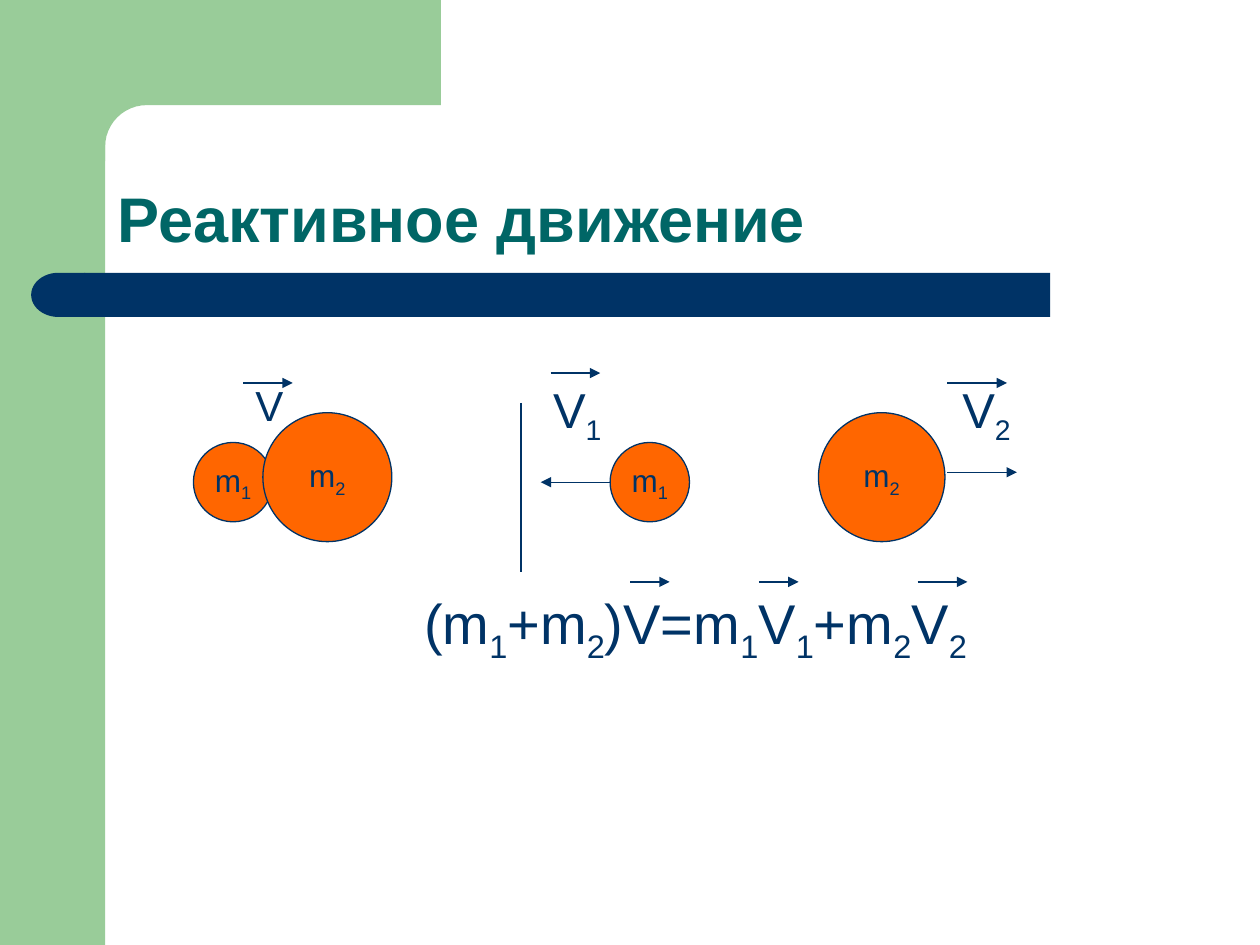
import math

import pptx
import pptx.dml.color
import pptx.enum.shapes
import pptx.enum.text
import pptx.oxml
import pptx.oxml.ns
import pptx.util

Cm = pptx.util.Cm
SHAPES = pptx.enum.shapes.MSO_SHAPE
ANCHOR = pptx.enum.text.MSO_ANCHOR
ALIGN = pptx.enum.text.PP_ALIGN

FONT = "Arial"
COLORS = {"green": "99CC99", "navy": "003366", "teal": "006666", "orange": "FF6600"}


def color(name):
    return pptx.dml.color.RGBColor.from_string(COLORS[name])


def add_run(paragraph, text, size, color_name="navy", bold=False):
    run = paragraph.add_run()
    run.text = text
    run.font.name = FONT
    run.font.size = pptx.util.Pt(size)
    run.font.bold = bold
    run.font.color.rgb = color(color_name)
    return run


def add_formula(paragraph, formula, size):
    """Write a formula in which the character after each "_" is a subscript."""
    first, *others = formula.split("_")
    add_run(paragraph, first, size)
    for piece in others:
        subscript = add_run(paragraph, piece[0], size)
        subscript.font._element.set("baseline", "-25000")
        if piece[1:]:
            add_run(paragraph, piece[1:], size)


def paint(shape, fill, line=None):
    shape.shadow.inherit = False
    shape.fill.solid()
    shape.fill.fore_color.rgb = color(fill)
    if line:
        shape.line.color.rgb = color(line)
        shape.line.width = pptx.util.Pt(0.75)
    else:
        shape.line.fill.background()


def add_block(slide, kind, left, top, width, height, fill):
    shape = slide.shapes.add_shape(kind, Cm(left), Cm(top), Cm(width), Cm(height))
    paint(shape, fill)
    return shape


def add_corner(slide):
    """Draw the top band, whose inner corner is rounded."""
    left, right, inner, top, bottom, radius = 1.27, 8.89, 2.12, 2.12, 3.25, 0.84
    angles = [math.radians(90 * step / 12) for step in range(13)]
    arc = [
        (inner + radius * (1 - math.sin(angle)), top + radius * (1 - math.cos(angle)))
        for angle in angles
    ]
    points = [(right, top), *arc, (inner, bottom), (left, bottom), (left, 0)]
    builder = slide.shapes.build_freeform(Cm(right), 0)
    builder.add_line_segments([(Cm(x), Cm(y)) for x, y in points], close=True)
    paint(builder.convert_to_shape(), "green")


def add_background(slide):
    add_block(slide, SHAPES.RECTANGLE, 0, 0, 2.12, 19.05, "green")
    add_corner(slide)
    add_block(slide, SHAPES.RECTANGLE, 1.7, 5.5, 19.47, 0.89, "navy")
    cap = add_block(slide, SHAPES.FLOWCHART_DELAY, 0.63, 5.5, 1.09, 0.89, "navy")
    cap._element.spPr.find(pptx.oxml.ns.qn("a:xfrm")).set("flipH", "1")


def add_title(slide, text):
    title = slide.shapes.title
    title.left, title.top, title.width, title.height = Cm(2.12), Cm(2.12), Cm(22.01), Cm(3.17)
    frame = title.text_frame
    frame.auto_size = pptx.enum.text.MSO_AUTO_SIZE.NONE
    frame.vertical_anchor = ANCHOR.BOTTOM
    paragraph = frame.paragraphs[0]
    paragraph.alignment = ALIGN.LEFT
    paragraph.line_spacing = 0.9
    add_run(paragraph, text, 36, "teal", bold=True)


def add_body(slide, formula, left, top, width, height):
    circle = slide.shapes.add_shape(SHAPES.OVAL, Cm(left), Cm(top), Cm(width), Cm(height))
    paint(circle, "orange", "navy")
    frame = circle.text_frame
    frame.word_wrap = False
    frame.vertical_anchor = ANCHOR.MIDDLE
    frame.paragraphs[0].alignment = ALIGN.CENTER
    add_formula(frame.paragraphs[0], formula, 18)


def add_label(slide, formula, left, top, width, height, size):
    box = slide.shapes.add_textbox(Cm(left), Cm(top), Cm(width), Cm(height))
    box.text_frame.word_wrap = True
    add_formula(box.text_frame.paragraphs[0], formula, size)


def add_line(slide, start, end, arrow=True):
    connector = slide.shapes.add_connector(
        pptx.enum.shapes.MSO_CONNECTOR.STRAIGHT, *map(Cm, start), *map(Cm, end)
    )
    connector.line.color.rgb = color("navy")
    connector.line.width = pptx.util.Pt(0.75)
    if arrow:
        line = connector.line._get_or_add_ln()
        pptx.oxml.ns.qn("a:tailEnd")
        pptx_tail = line.makeelement(pptx.oxml.ns.qn("a:tailEnd"), {"type": "triangle"})
        line.append(pptx_tail)
    properties = connector._element.spPr
    properties.append(properties.makeelement(pptx.oxml.ns.qn("a:effectLst"), {}))


def add_vector_mark(slide, left, top, length):
    add_line(slide, (left, top), (left + length, top))


def main():
    presentation = pptx.Presentation()
    presentation.slide_width, presentation.slide_height = Cm(25.4), Cm(19.05)
    slide = presentation.slides.add_slide(presentation.slide_layouts[5])

    add_background(slide)
    add_title(slide, "Реактивное движение")

    # Before the separation
    add_body(slide, "m_1", 3.9, 8.92, 1.6, 1.6)
    add_body(slide, "m_2", 5.3, 8.32, 2.6, 2.6)
    add_label(slide, "V", 4.9, 7.52, 0.95, 1.27, 24)
    add_vector_mark(slide, 4.9, 7.72, 1)

    add_line(slide, (10.5, 8.12), (10.5, 11.53), arrow=False)

    # After the separation
    add_body(slide, "m_1", 12.3, 8.92, 1.6, 1.6)
    add_body(slide, "m_2", 16.5, 8.32, 2.55, 2.6)
    add_line(slide, (12.3, 9.72), (10.9, 9.72))
    add_line(slide, (19.1, 9.52), (20.5, 9.52))
    add_label(slide, "V_1", 10.9, 7.52, 1.6, 1.45, 28)
    add_vector_mark(slide, 11.1, 7.52, 1)
    add_label(slide, "V_2", 19.15, 7.52, 1.56, 1.45, 28)
    add_vector_mark(slide, 19.1, 7.72, 1.2)

    # Conservation of momentum
    add_label(slide, "(m_1+m_2)V=m_1V_1+m_2V_2", 8.3, 11.73, 11.74, 1.6, 32)
    for left, length in ((12.7, 0.8), (15.3, 0.8), (18.5, 1)):
        add_vector_mark(slide, left, 11.73, length)

    presentation.save("out.pptx")


if __name__ == "__main__":
    main()
